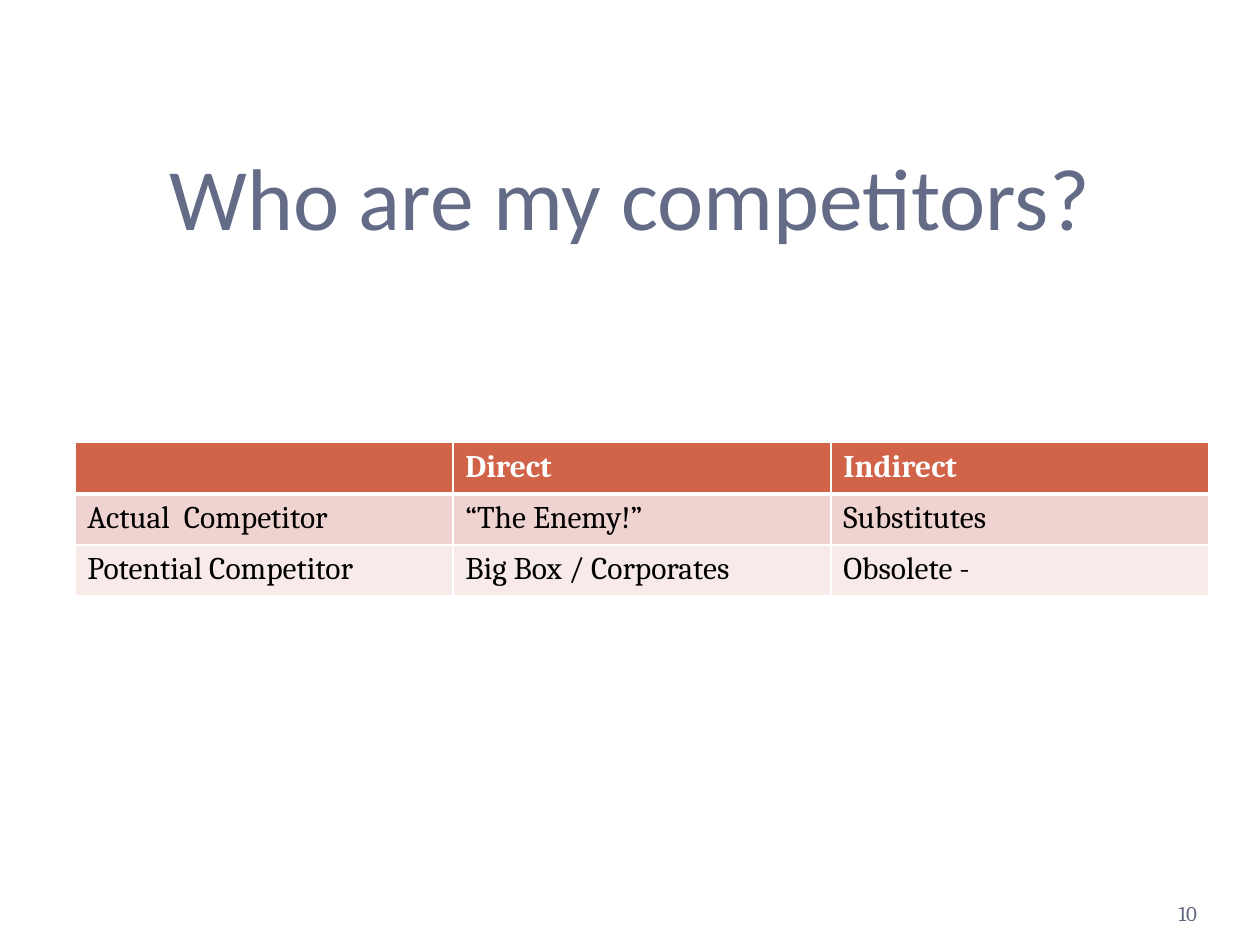
from lxml import etree
from pptx import Presentation
from pptx.dml.color import RGBColor
from pptx.enum.text import MSO_ANCHOR, PP_ALIGN
from pptx.oxml.ns import qn
from pptx.util import Pt

BOTTOM = MSO_ANCHOR.BOTTOM
CENTER, RIGHT = PP_ALIGN.CENTER, PP_ALIGN.RIGHT

COLORS = {
    "title": "646B86",
    "number": "606680",
    "header": "D16349",
    "odd": "EED3D0",
    "even": "F7EAE9",
    "white": "FFFFFF",
    "black": "000000",
}

COMPETITORS = [
    ["", "Direct", "Indirect"],
    ["Actual  Competitor", "“The Enemy!”", "Substitutes"],
    ["Potential Competitor", "Big Box / Corporates", "Obsolete -"],
]


class Deck:
    """Holds the style and the current slide, and adds elements in points."""

    heading_font = "Calibri"
    body_font = "Cambria"

    def __init__(self, prs):
        self.s = prs.slides.add_slide(prs.slide_layouts[6])

    def style(self, p, font, size, color, bold=False):
        p.font.name = font
        p.font.size = Pt(size)
        p.font.bold = bold
        p.font.color.rgb = RGBColor.from_string(COLORS[color])

    def text(self, text, box, font, size, color, align, bottom=0):
        sp = self.s.shapes.add_textbox(*map(Pt, box))
        tf = sp.text_frame
        tf.word_wrap = True
        tf.vertical_anchor = BOTTOM
        tf.margin_left = tf.margin_top = tf.margin_right = 0
        tf.margin_bottom = Pt(bottom)
        p = tf.paragraphs[0]
        p.text = text
        p.alignment = align
        self.style(p, font, size, color)

    def borders(self, cell, widths):
        tc_pr = cell._tc.get_or_add_tcPr()
        for side, width in zip("LRTB", widths):
            ln = etree.SubElement(tc_pr, qn(f"a:ln{side}"), w=str(Pt(width)))
            fill = etree.SubElement(ln, qn("a:solidFill"))
            etree.SubElement(fill, qn("a:srgbClr"), val=COLORS["white"])

    def table(self, rows, left, top, col_width, row_height):
        n_rows, n_cols = len(rows), len(rows[0])
        table = self.s.shapes.add_table(
            n_rows, n_cols, Pt(left), Pt(top),
            Pt(col_width * n_cols), Pt(row_height * n_rows)).table
        for i, row in enumerate(rows):
            header = i == 0
            fill = "header" if header else "odd" if i % 2 else "even"
            for j, text in enumerate(row):
                cell = table.cell(i, j)
                self.borders(cell, (1, 1, 3 if i == 1 else 1, 3 if header else 1))
                cell.fill.solid()
                cell.fill.fore_color.rgb = RGBColor.from_string(COLORS[fill])
                p = cell.text_frame.paragraphs[0]
                if text:
                    p.text = text
                self.style(p, self.body_font, 18, "white" if header else "black", header)


def main():
    prs = Presentation()
    prs.slide_width, prs.slide_height = Pt(720), Pt(540)
    deck = Deck(prs)
    deck.text("Who are my competitors?", (36, 55.5, 648, 90),
              deck.heading_font, 50, "title", CENTER, bottom=3.6)
    deck.table(COMPETITORS, 42.75, 253, 216, 29.2)
    deck.text("10", (624, 500.5, 60, 28.75), deck.body_font, 12, "number", RIGHT)
    prs.save("out.pptx")


if __name__ == "__main__":
    main()
